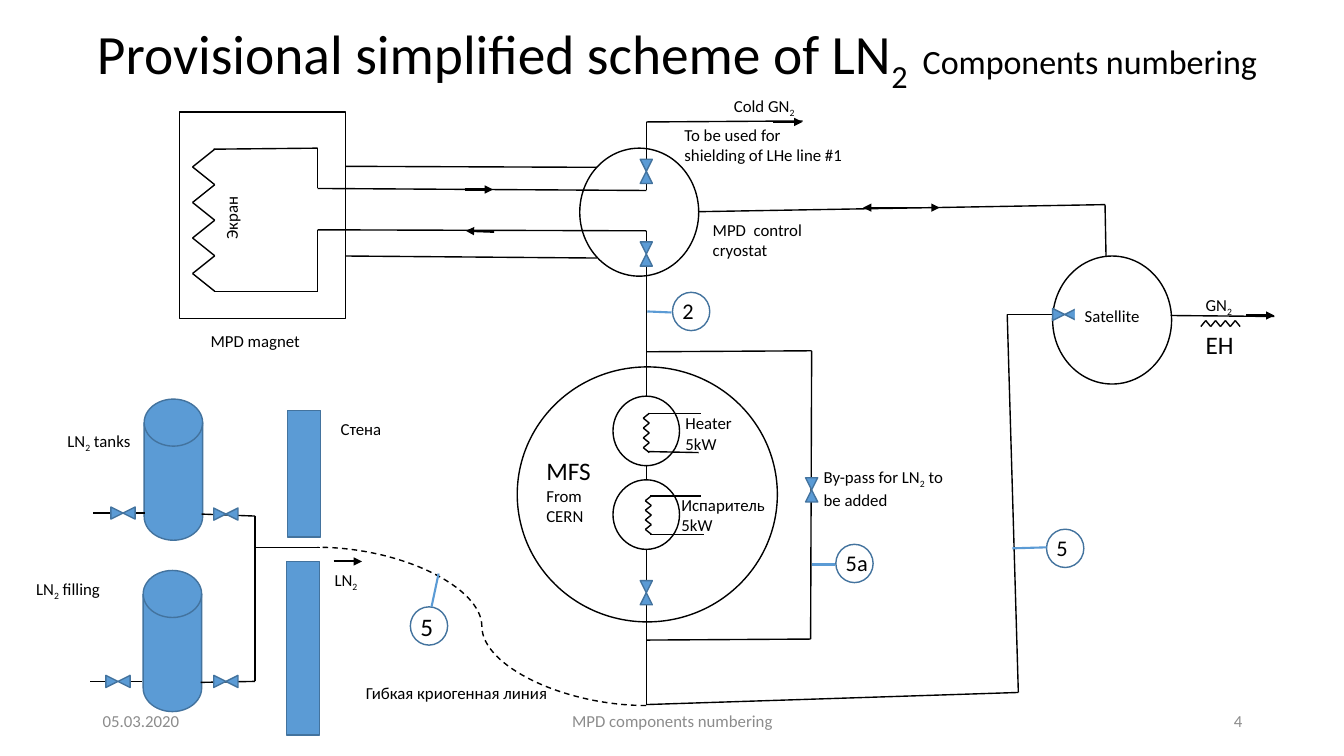
"""Build the liquid nitrogen supply scheme slide with its component numbers."""
from lxml import etree
from pptx import Presentation
from pptx import util as u
from pptx.dml.color import RGBColor
from pptx.enum import dml, shapes, text
from pptx.oxml import ns

SCALE = 9144
FONT = "Calibri"
COLORS = {"ink": "000000", "blue": "5B9BD5", "edge": "43739E",
          "paper": "FFFFFF", "footer": "8C8C8C"}
KIND = shapes.MSO_SHAPE


def px(length):
    return u.Emu(round(length * SCALE))


def color(name):
    return RGBColor.from_string(COLORS[name])


def write(paragraph, wording, size, ink="ink"):
    for index, part in enumerate(wording.split("_")):
        if not part:
            continue
        run = paragraph.add_run()
        run.text = part
        run.font.size = u.Pt(size)
        run.font.name = FONT
        run.font.color.rgb = color(ink)
        if index % 2:
            run._r.get_or_add_rPr().set("baseline", "-25000")


def label(parent, wording, x, y, w, h, size=12, ink="ink", align="LEFT",
          anchor="TOP", fill=None, turn=0):
    box = parent.shapes.add_textbox(px(x), px(y), px(w), px(h))
    box.rotation = turn
    if fill:
        box.fill.solid()
        box.fill.fore_color.rgb = color(fill)
    frame = box.text_frame
    frame.word_wrap = h >= 40
    frame.vertical_anchor = getattr(text.MSO_ANCHOR, anchor)
    paragraph = frame.paragraphs[0]
    paragraph.alignment = getattr(text.PP_ALIGN, align)
    write(paragraph, wording, size, ink)
    return frame


def outline(parent, kind, x, y, w, h, fill=None, edge="ink", turn=0):
    figure = parent.shapes.add_shape(kind, px(x), px(y), px(w), px(h))
    figure.shadow.inherit = False
    figure.rotation = turn
    if fill:
        figure.fill.solid()
        figure.fill.fore_color.rgb = color(fill)
    else:
        figure.fill.background()
    figure.line.color.rgb = color(edge)
    figure.line.width = u.Pt(1)


def line(parent, start, end, ink="ink", width=1, ends=(), curved=False):
    kind = shapes.MSO_CONNECTOR.CURVE if curved else shapes.MSO_CONNECTOR.STRAIGHT
    link = parent.shapes.add_connector(kind, *map(px, start + end))
    link.line.color.rgb = color(ink)
    link.line.width = u.Pt(width)
    if curved:
        link.line.dash_style = dml.MSO_LINE.DASH
    stroke = link.line._get_or_add_ln()
    for end_name in ends:
        etree.SubElement(stroke, ns.qn(f"a:{end_name}"), type="triangle")
    etree.SubElement(link._element.spPr, ns.qn("a:effectLst"))


def pipe(parent, *points):
    for start, end in zip(points, points[1:]):
        line(parent, start, end)


def zigzag(slide, base, peak, first, last, upright=True):
    points = []
    for index in range(9):
        along = first + (last - first) * index / 8
        across = peak if index % 2 else base
        points.append((across, along) if upright else (along, across))
    pipe(slide.shapes.add_group_shape(), *points)


def valve(slide, x, y, upright=True):
    pair = slide.shapes.add_group_shape()
    for side, turn in ((-6, 180 if upright else 90), (6, 0 if upright else 270)):
        dx, dy = (0, side) if upright else (side, 0)
        outline(pair, KIND.ISOSCELES_TRIANGLE, x + dx - 6, y + dy - 6, 12, 12,
                "blue", "edge", turn)


def number_tag(slide, number, x, y, start, end, size=16):
    tag = slide.shapes.add_group_shape()
    outline(tag, KIND.OVAL, x, y, 37, 38, edge="edge")
    label(tag, number, x, y, 43, 37, size)
    line(slide, start, end, "blue", 1.5)


def heading(slide):
    title = slide.shapes.title
    title.left, title.top, title.width, title.height = map(px, (11, 19, 1321, 70))
    frame = title.text_frame
    frame.auto_size = text.MSO_AUTO_SIZE.NONE
    frame.vertical_anchor = text.MSO_ANCHOR.MIDDLE
    paragraph = frame.paragraphs[0]
    paragraph.alignment = text.PP_ALIGN.CENTER
    paragraph.line_spacing = 0.9
    write(paragraph, "Provisional simplified scheme of LN_2 _", 39.6)
    write(paragraph, " Components numbering", 24.3)


def draw_vessels(slide):
    for vessel in ((513, 364, 258, 253), (608, 393, 66, 69), (575, 147, 118, 127),
                   (1044, 254, 118, 127), (608, 476, 66, 69)):
        outline(slide, KIND.FLOWCHART_CONNECTOR, *vessel)
    outline(slide, KIND.RECTANGLE, 178, 111, 165, 205)
    for wall in ((285, 407, 33, 126), (284, 557, 33, 172)):
        outline(slide, KIND.RECTANGLE, *wall, "blue", "edge")
    for tank in ((143, 396, 58, 140), (142, 566, 58, 140)):
        outline(slide, KIND.FLOWCHART_MAGNETIC_DISK, *tank, "blue", "edge")


def draw_pipes(slide):
    for route in (
        ((343, 165), (592, 166)), ((343, 254), (592, 256)),
        ((212, 148), (315, 147), (315, 187), (641, 189), (641, 121), (796, 120)),
        ((212, 289), (315, 289), (315, 228), (641, 229), (641, 394)),
        ((641, 462), (641, 476)),
        ((641, 545), (641, 699), (1010, 687), (999, 312), (1044, 312)),
        ((693, 210), (1096, 203), (1097, 254)),
        ((1161, 313), (1264, 314)),
        ((641, 349), (805, 348), (804, 634), (641, 635)),
        ((645, 530), (698, 530)), ((645, 492), (695, 492)),
        ((643, 448), (693, 449)), ((643, 410), (695, 410)),
        ((317, 543), (253, 543)),
        ((200, 510), (253, 512), (253, 676), (199, 677)),
        ((144, 509), (92, 509)), ((141, 676), (89, 676)),
    ):
        pipe(slide, *route)
    line(slide, (641, 700), (315, 543), curved=True)
    for coil in ((213, 191, 148, 289), (646, 640, 492, 530), (644, 638, 410, 449)):
        zigzag(slide, *coil)
    zigzag(slide, 324, 318, 1191, 1230, upright=False)


def draw_flow_arrows(slide):
    for start, end in (((1236, 313), (1264, 313)), ((461, 188), (489, 188)),
                       ((331, 557), (359, 557)), ((490, 230), (462, 229)),
                       ((767, 121), (796, 121))):
        line(slide, start, end, width=1.5, ends=("tailEnd",))
    line(slide, (856, 206), (932, 206), ends=("headEnd", "tailEnd"))


def draw_valves(slide):
    for x, y in ((641, 252), (641, 170), (641, 588), (805, 486)):
        valve(slide, x, y)
    for x, y in ((1056, 312), (224, 676), (224, 510), (117, 676), (122, 509)):
        valve(slide, x, y, upright=False)


def draw_labels(slide):
    for caption in (
        ("LN_2_", 322, 560, 46, 30), ("GN_2_", 1186, 287, 50, 30),
        ("Испаритель 5kW", 666, 486, 135, 50),
        ("Гибкая криогенная линия", 353, 672, 222, 30),
        ("Стена", 328, 411, 62, 30), ("LN_2_ tanks", 57, 422, 101, 30),
        ("LN_2_ filling", 26, 569, 95, 30), ("Cold GN_2_", 718, 90, 82, 30),
        ("Heater  5kW", 670, 405, 104, 50),
        ("By-pass for LN_2_ to be added", 807, 458, 158, 50),
        ("To be used for shielding of LHe line #1", 669, 119, 177, 50),
        ("EH", 1186, 322, 50, 40, 18),
    ):
        label(slide, *caption)
    for caption in (("MPD magnet", 199, 323, 125, 30),
                    ("MPD  control cryostat", 697, 213, 138, 50),
                    ("Satellite", 1066, 298, 78, 30)):
        label(slide, *caption, fill="paper")
    label(slide, "Экран", 198, 201, 63, 30, fill="paper", turn=270)
    station = label(slide, "MFS", 532, 447, 69, 81, 18)
    write(station.add_paragraph(), "From CERN", 12)
    for wording, x, w, align in (("05.03.2020", 92, 300, "LEFT"),
                                 ("MPD components numbering", 442, 450, "CENTER"),
                                 ("4", 942, 300, "RIGHT")):
        label(slide, wording, x, 695, w, 40, ink="footer", align=align,
              anchor="MIDDLE")


def main():
    deck = Presentation()
    deck.slide_width, deck.slide_height = px(1333), px(750)
    slide = deck.slides.add_slide(deck.slide_layouts[5])
    heading(slide)
    draw_vessels(slide)
    draw_pipes(slide)
    draw_flow_arrows(slide)
    draw_valves(slide)
    draw_labels(slide)
    number_tag(slide, "5a", 829, 540, (805, 560), (828, 560))
    number_tag(slide, "5", 1038, 525, (1004, 544), (1038, 543))
    number_tag(slide, "5", 407, 602, (428, 602), (435, 569), size=18)
    number_tag(slide, "2", 667, 290, (642, 309), (666, 310))
    deck.save("out.pptx")


if __name__ == "__main__":
    main()
